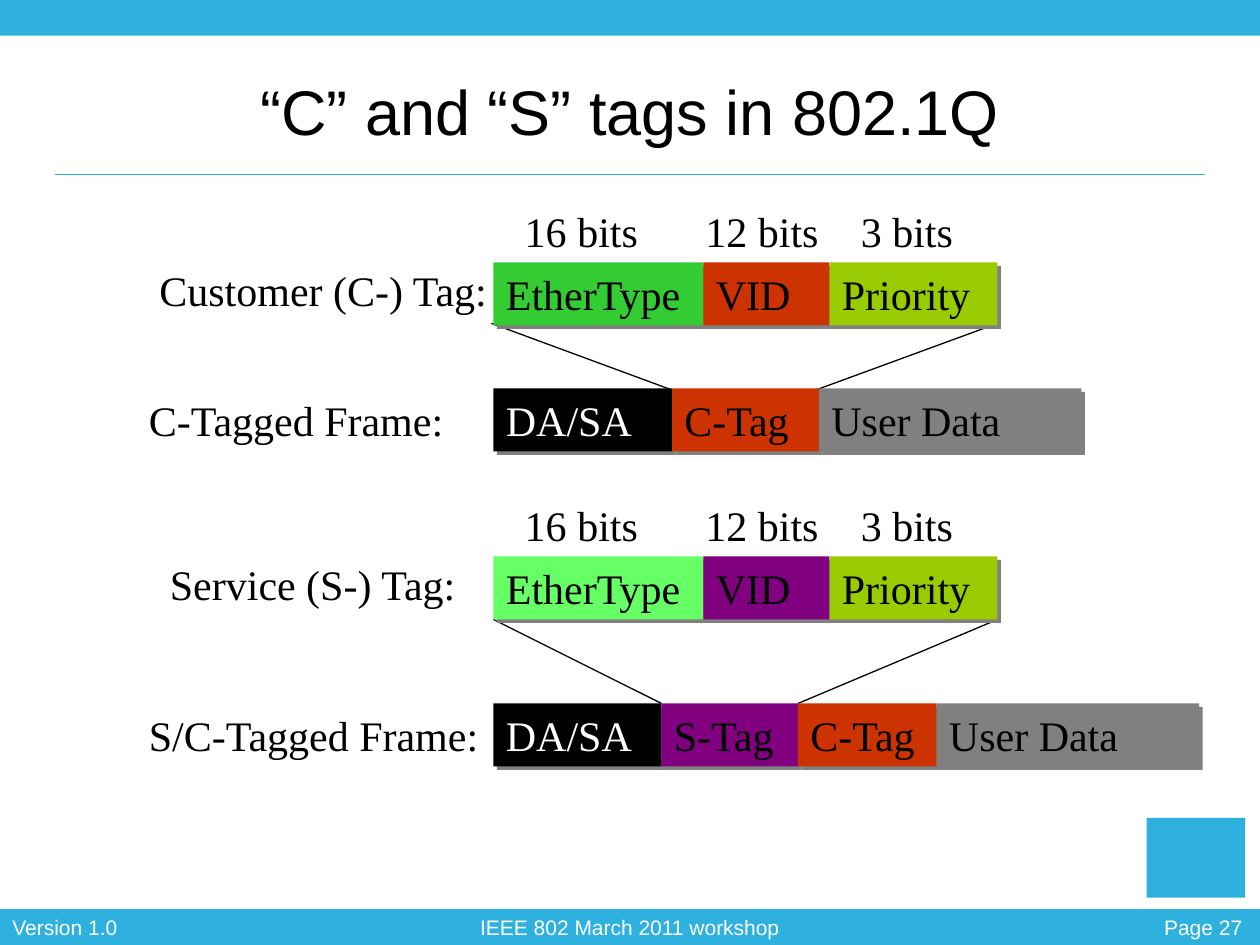
from dataclasses import dataclass

from lxml import etree
from pptx import Presentation, util as u
from pptx.dml.color import RGBColor
from pptx.enum import shapes, text
from pptx.oxml import ns


@dataclass(frozen=True)
class Theme:
    sans: str = "Arial"
    serif: str = "Times New Roman"
    big: int = 36
    body: int = 24
    small: int = 12
    sky: str = "2FB1DF"
    rule: str = "2FADDF"
    black: str = "000000"
    white: str = "FFFFFF"
    gray: str = "808080"
    green: str = "33CC33"
    mint: str = "66FF66"
    red: str = "CC3300"
    plum: str = "800080"
    lime: str = "99CC00"


@dataclass(frozen=True)
class Cell:
    label: str
    cols: float
    fill: str
    ink: str = "000000"


@dataclass(frozen=True)
class Band:
    """A captioned row of cells, all of it measured in grid units."""
    name: str
    left: float
    top: float
    width: float
    row: float
    cells: tuple[Cell, ...]


T = Theme()
UNIT = u.Inches(10) // 120  # grid of 120 columns by 90 rows
START, HIGH = 47, 6  # first column and height of every band
LEFT, MID, RIGHT = text.PP_ALIGN.LEFT, text.PP_ALIGN.CENTER, text.PP_ALIGN.RIGHT


def grid(*vals: float) -> list[int]:
    return [round(v * UNIT) for v in vals]


def write(shape, words: str, size: int, font: str, ink: str,
          align=LEFT, wrap: bool = True, anchor=text.MSO_ANCHOR.TOP) -> None:
    frame = shape.text_frame
    frame.text = words
    frame.word_wrap = wrap
    frame.vertical_anchor = anchor
    para = frame.paragraphs[0]
    para.alignment = align
    face = para.runs[0].font
    face.size, face.name = u.Pt(size), font
    face.color.rgb = RGBColor.from_string(ink)


def label(slide, words: str, x: float, y: float, w: float, h: float = HIGH,
          size: int = T.body, font: str = T.serif, ink: str = T.black,
          **opts) -> None:
    write(slide.shapes.add_textbox(*grid(x, y, w, h)), words, size, font, ink, **opts)


def rect(slide, x: float, y: float, w: float, h: float, fill: str):
    box = slide.shapes.add_shape(shapes.MSO_SHAPE.RECTANGLE, *grid(x, y, w, h))
    box.shadow.inherit = False
    box.fill.solid()
    box.fill.fore_color.rgb = RGBColor.from_string(fill)
    box.line.fill.background()
    return box


def shade(box) -> None:
    fx = box._element.spPr.find(ns.qn("a:effectLst"))
    drop = etree.SubElement(fx, ns.qn("a:outerShdw"), dist="35921",
                            dir="2700000", algn="ctr", rotWithShape="0")
    etree.SubElement(drop, ns.qn("a:srgbClr"), val=T.gray)


def line(slide, x1: float, y1: float, x2: float, y2: float,
         ink: str = T.black) -> None:
    rod = slide.shapes.add_connector(shapes.MSO_CONNECTOR.STRAIGHT,
                                     *grid(x1, y1, x2, y2))
    rod.line.color.rgb = RGBColor.from_string(ink)
    rod.line.width = u.Pt(0.75)
    etree.SubElement(rod._element.spPr, ns.qn("a:effectLst"))


def draw(slide, band: Band) -> None:
    label(slide, band.name, band.left, band.top, band.width, wrap=False)
    x = START
    for cell in band.cells:
        box = rect(slide, x, band.row, cell.cols, HIGH, cell.fill)
        shade(box)
        write(box, cell.label, T.body, T.serif, cell.ink)
        x += cell.cols


def tag(ether: str, vid: str) -> tuple[Cell, ...]:
    return (Cell("EtherType", 20, ether), Cell("VID", 12, vid),
            Cell("Priority", 16, T.lime))


def main() -> None:
    deck = Presentation()
    deck.slide_width, deck.slide_height = grid(120, 90)
    slide = deck.slides.add_slide(deck.slide_layouts[6])

    # Page frame: bars, rule, footer and emblem block
    for y in (0, 86.6):
        rect(slide, 0, y, 120, 3.4, T.sky)
    line(slide, 5.2, 16.65, 114.8, 16.65, T.rule)
    for words, x, w, align in (("Version 1.0", 0, 12.5, LEFT),
                               ("IEEE 802 March 2011 workshop", 0, 120, MID),
                               ("Page 27", 104.4, 15.1, RIGHT)):
        label(slide, words, x, 86.5, w, 3.6, T.small, T.sans, T.white, align=align)
    rect(slide, 109.2, 77.9, 9.4, 7.6, T.sky)

    # Title
    label(slide, "“C” and “S” tags in 802.1Q", 6, 5.3, 108, 10.4, T.big, T.sans,
          align=MID, anchor=text.MSO_ANCHOR.MIDDLE)

    # Lines that open each tag out of its frame
    for ends in ((46.8, 30.8, 64.7, 37.4), (95, 30.8, 77, 37.4),
                 (47, 59, 63, 67), (95, 59, 76, 67)):
        line(slide, *ends)

    # Tags and tagged frames
    c_tag, s_tag = 25, 53
    user = Cell("User Data", 25, T.gray)
    bands = (
        Band("Customer (C-) Tag:", 14, 24.6, 34, c_tag, tag(T.green, T.red)),
        Band("C-Tagged Frame:", 13, 37, 30.7, 37,
             (Cell("DA/SA", 17, T.black, T.white), Cell("C-Tag", 14, T.red), user)),
        Band("Service (S-) Tag:", 15, 52.6, 29.9, s_tag, tag(T.mint, T.plum)),
        Band("S/C-Tagged Frame:", 13, 67, 34.1, 67,
             (Cell("DA/SA", 16, T.black, T.white), Cell("S-Tag", 13, T.plum),
              Cell("C-Tag", 13.2, T.red), user)),
    )
    for band in bands:
        draw(slide, band)

    # Field sizes above each tag
    for row in (c_tag, s_tag):
        for words, x, w in (("16 bits", 48.8, 13.2), ("12 bits", 66, 13.2),
                            ("3 bits", 80.8, 11.2)):
            label(slide, words, x, row - HIGH, w, wrap=False)

    deck.save("out.pptx")


if __name__ == "__main__":
    main()
